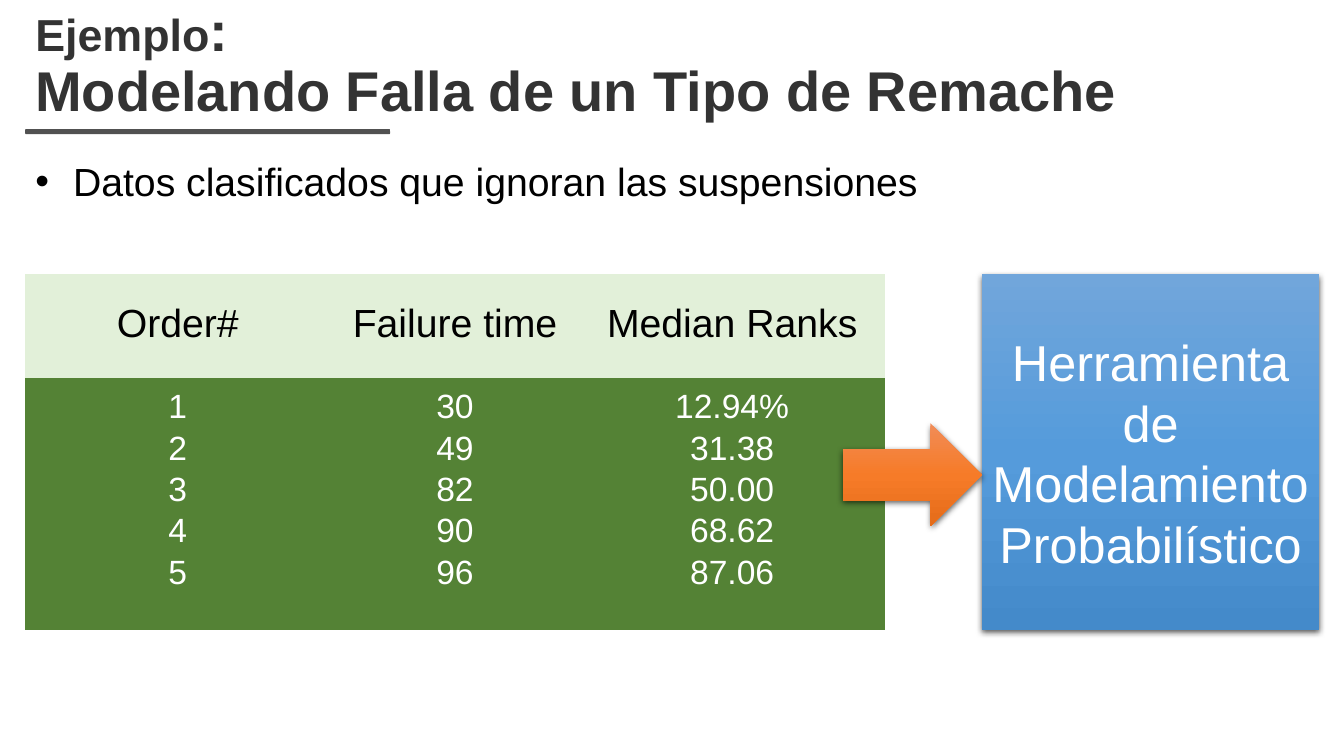
from lxml import etree
from pptx import Presentation
from pptx.dml.color import RGBColor
from pptx.enum.shapes import MSO_SHAPE
from pptx.enum.text import MSO_ANCHOR, MSO_AUTO_SIZE, PP_ALIGN
from pptx.oxml.ns import qn
from pptx.util import Pt

LEFT, CENTER = PP_ALIGN.LEFT, PP_ALIGN.CENTER
TOP, MIDDLE, BOTTOM = MSO_ANCHOR.TOP, MSO_ANCHOR.MIDDLE, MSO_ANCHOR.BOTTOM

THEME = {
    "font": "Arial",
    "title": "333333", "text": "000000", "light": "FFFFFF", "rule": "515151",
    "head_fill": "E2F0D9", "body_fill": "548235",
    "blue": ("71A6DB", "559BDB", "448ACA"),
    "orange": ("F18C57", "F67B28", "E56C19"),
    "kicker_size": 32, "title_size": 40, "bullet_size": 28,
    "head_size": 28, "body_size": 24, "tool_size": 36,
}

KICKER = "Ejemplo"
TITLE = ["", "Modelando Falla de un Tipo de Remache"]
BULLET = "Datos clasificados que ignoran las suspensiones"
TOOL = "Herramienta de Modelamiento Probabilístico"
RANKS = [
    ("Order#", "Failure time", "Median Ranks"),
    ("1", "30", "12.94%"),
    ("2", "49", "31.38"),
    ("3", "82", "50.00"),
    ("4", "90", "68.62"),
    ("5", "96", "87.06"),
]

EDGE = 18
TABLE_TOP, HEAD_H, BODY_H = 196, 74, 180
COL_WIDTHS = (218, 178, 218)
ROW_H, PAD_TOP = 29.5, 7.25
PAD_BOTTOM = BODY_H - PAD_TOP - ROW_H * (len(RANKS) - 1)
TOOL_X, TOOL_W = 701.3, 241.2
ARROW_W, ARROW_H = 99.4, 73.4


def rgb(name):
    return RGBColor.from_string(THEME[name])


def add_run(p, text, size, color, bold=False):
    r = p.add_run()
    r.text = text
    r.font.name, r.font.size, r.font.bold = THEME["font"], Pt(size), bold
    r.font.color.rgb = rgb(color)


def place(sp, x, y, w, h):
    sp.left, sp.top, sp.width, sp.height = Pt(x), Pt(y), Pt(w), Pt(h)


def setup_placeholder(sp, anchor):
    tf = sp.text_frame
    tf.auto_size, tf.word_wrap = MSO_AUTO_SIZE.NONE, True
    tf.vertical_anchor = anchor
    p = tf.paragraphs[0]
    p.alignment, p.line_spacing, p.space_before = LEFT, 0.9, Pt(0)
    return p


def add_flat_shape(s, kind, x, y, w, h):
    sp = s.shapes.add_shape(kind, Pt(x), Pt(y), Pt(w), Pt(h))
    sp.shadow.inherit = False
    sp.line.fill.background()
    return sp


def add_glossy_shape(s, kind, x, y, w, h, colors):
    """Add a shape with a three-stop vertical gradient and a soft shadow."""
    sp = add_flat_shape(s, kind, x, y, w, h)
    sp.fill.gradient()
    sp.fill.gradient_angle = 270
    stops = sp._element.spPr.find(".//" + qn("a:gsLst"))
    for stop in list(stops):
        stops.remove(stop)
    for i, color in enumerate(THEME[colors]):
        stop = etree.SubElement(stops, qn("a:gs"), pos=str(i * 50000))
        etree.SubElement(stop, qn("a:srgbClr"), val=color)
    effects = sp._element.spPr.find(qn("a:effectLst"))
    shadow = etree.SubElement(
        effects, qn("a:outerShdw"), blurRad=str(Pt(4.5)), dist=str(Pt(1.5)),
        dir="5400000", algn="ctr", rotWithShape="0")
    color = etree.SubElement(shadow, qn("a:srgbClr"), val="000000")
    etree.SubElement(color, qn("a:alpha"), val="63000")
    return sp


def add_title(s):
    sp = s.shapes.title
    place(sp, EDGE, 24.5, 879, 67.7)
    p = setup_placeholder(sp, BOTTOM)
    add_run(p, KICKER, THEME["kicker_size"], "title", True)
    add_run(p, ":", THEME["title_size"], "title", True)
    p.add_line_break()
    add_run(p, TITLE[-1], THEME["title_size"], "title", True)


def add_bullet(s):
    sp = s.placeholders[1]
    place(sp, EDGE, 112.3, 924, 60)
    p = setup_placeholder(sp, TOP)
    pPr = p._p.get_or_add_pPr()
    pPr.set("marL", str(Pt(27)))
    pPr.set("indent", str(-Pt(27)))
    etree.SubElement(pPr, qn("a:buFont"), typeface=THEME["font"])
    etree.SubElement(pPr, qn("a:buChar"), char="•")
    add_run(p, BULLET, THEME["bullet_size"], "text")


def add_ranks_table(s):
    last = len(RANKS) - 1
    heights = [HEAD_H] + [ROW_H] * last
    heights[1] += PAD_TOP
    heights[last] += PAD_BOTTOM
    table = s.shapes.add_table(
        len(RANKS), len(COL_WIDTHS), Pt(EDGE), Pt(TABLE_TOP),
        Pt(sum(COL_WIDTHS)), Pt(sum(heights))).table
    table.first_row = table.horz_banding = False
    # "No Style, No Grid"
    style = table._tbl.tblPr.find(qn("a:tableStyleId"))
    style.text = "{2D5ABB26-0587-4C30-8999-92F81FD0307C}"
    for col, width in zip(table.columns, COL_WIDTHS):
        col.width = Pt(width)
    for i, values in enumerate(RANKS):
        table.rows[i].height = Pt(heights[i])
        part, color = ("head", "text") if i == 0 else ("body", "light")
        for j, value in enumerate(values):
            cell = table.cell(i, j)
            cell.fill.solid()
            cell.fill.fore_color.rgb = rgb(part + "_fill")
            cell.vertical_anchor = MIDDLE
            cell.margin_left = cell.margin_right = Pt(4)
            cell.margin_top = Pt(PAD_TOP if i == 1 else 0)
            cell.margin_bottom = Pt(PAD_BOTTOM if i == last else 0)
            p = cell.text_frame.paragraphs[0]
            p.alignment, p.line_spacing = CENTER, 0.9
            add_run(p, value, THEME[part + "_size"], color)


def add_tool(s):
    height = HEAD_H + BODY_H
    sp = add_glossy_shape(s, MSO_SHAPE.RECTANGLE, TOOL_X, TABLE_TOP,
                          TOOL_W, height, "blue")
    tf = sp.text_frame
    tf.word_wrap, tf.vertical_anchor = True, MIDDLE
    tf.margin_left = tf.margin_right = Pt(4)
    p = tf.paragraphs[0]
    p.alignment = CENTER
    add_run(p, TOOL, THEME["tool_size"], "light")
    add_glossy_shape(s, MSO_SHAPE.RIGHT_ARROW, TOOL_X - ARROW_W, 302.4,
                     ARROW_W, ARROW_H, "orange")


def main():
    prs = Presentation()
    prs.slide_width, prs.slide_height = Pt(960), Pt(540)
    s = prs.slides.add_slide(prs.slide_layouts[0])
    rule = add_flat_shape(s, MSO_SHAPE.ROUNDED_RECTANGLE, EDGE, 92.2, 260.6, 3.6)
    rule.fill.solid()
    rule.fill.fore_color.rgb = rgb("rule")
    add_title(s)
    add_bullet(s)
    add_ranks_table(s)
    add_tool(s)
    prs.save("out.pptx")


if __name__ == "__main__":
    main()
